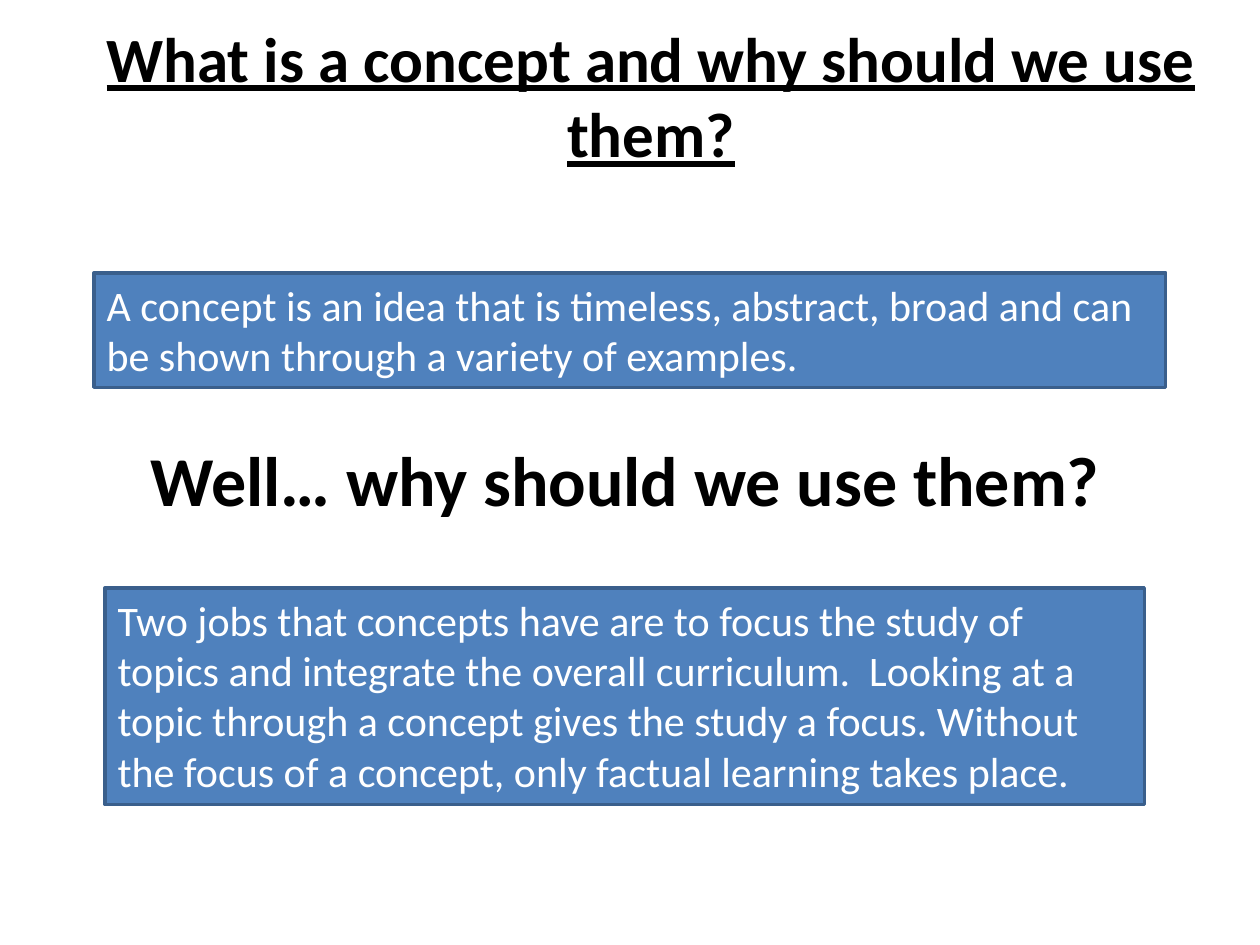
"""Build a slide that explains what a concept is and why to use concepts."""
from pptx import Presentation
from pptx.dml.color import RGBColor
from pptx.enum.shapes import MSO_SHAPE
from pptx.enum.text import MSO_ANCHOR, PP_ALIGN
from pptx.util import Cm, Pt

RECTANGLE = MSO_SHAPE.RECTANGLE
TOP, MIDDLE = MSO_ANCHOR.TOP, MSO_ANCHOR.MIDDLE
LEFT, CENTER = PP_ALIGN.LEFT, PP_ALIGN.CENTER
BLACK, WHITE, BLUE, DARK_BLUE = "000000", "FFFFFF", "4F81BD", "3A5F8C"


def color(value):
    return RGBColor.from_string(value)


def write(shape, text, size, ink=BLACK, align=CENTER, anchor=TOP, bold=False, underline=False):
    frame = shape.text_frame
    frame.word_wrap = True
    frame.vertical_anchor = anchor
    paragraph = frame.paragraphs[0]
    paragraph.alignment = align
    run = paragraph.add_run()
    run.text = text
    run.font.name = "Calibri"
    run.font.size = Pt(size)
    run.font.bold = bold
    run.font.underline = underline
    run.font.color.rgb = color(ink)


presentation = Presentation()
presentation.slide_width = Cm(25.4)
presentation.slide_height = Cm(19.05)
slide = presentation.slides.add_slide(presentation.slide_layouts[6])

title = slide.shapes.add_textbox(Cm(0.85), Cm(0.85), Cm(24.55), Cm(2.12))
write(title, "What is a concept and why should we use them?", 36,
      anchor=MIDDLE, bold=True, underline=True)

answers = [
    (1.9, 5.5, 21.6, 2.31,
     "A concept is an idea that is timeless, abstract, broad and can be shown "
     "through a variety of examples."),
    (2.12, 11.85, 20.95, 4.37,
     "Two jobs that concepts have are to focus the study of topics and integrate "
     "the overall curriculum.  Looking at a topic through a concept gives the study "
     "a focus. Without the focus of a concept, only factual learning takes place."),
]
for left, top, width, height, text in answers:
    box = slide.shapes.add_shape(RECTANGLE, Cm(left), Cm(top), Cm(width), Cm(height))
    box.shadow.inherit = False
    box.fill.solid()
    box.fill.fore_color.rgb = color(BLUE)
    box.line.color.rgb = color(DARK_BLUE)
    box.line.width = Pt(2)
    write(box, text, 24, ink=WHITE, align=LEFT)

question = slide.shapes.add_textbox(Cm(1.7), Cm(8.68), Cm(21.8), Cm(1.96))
write(question, "Well… why should we use them?", 40, bold=True)

presentation.save("out.pptx")
